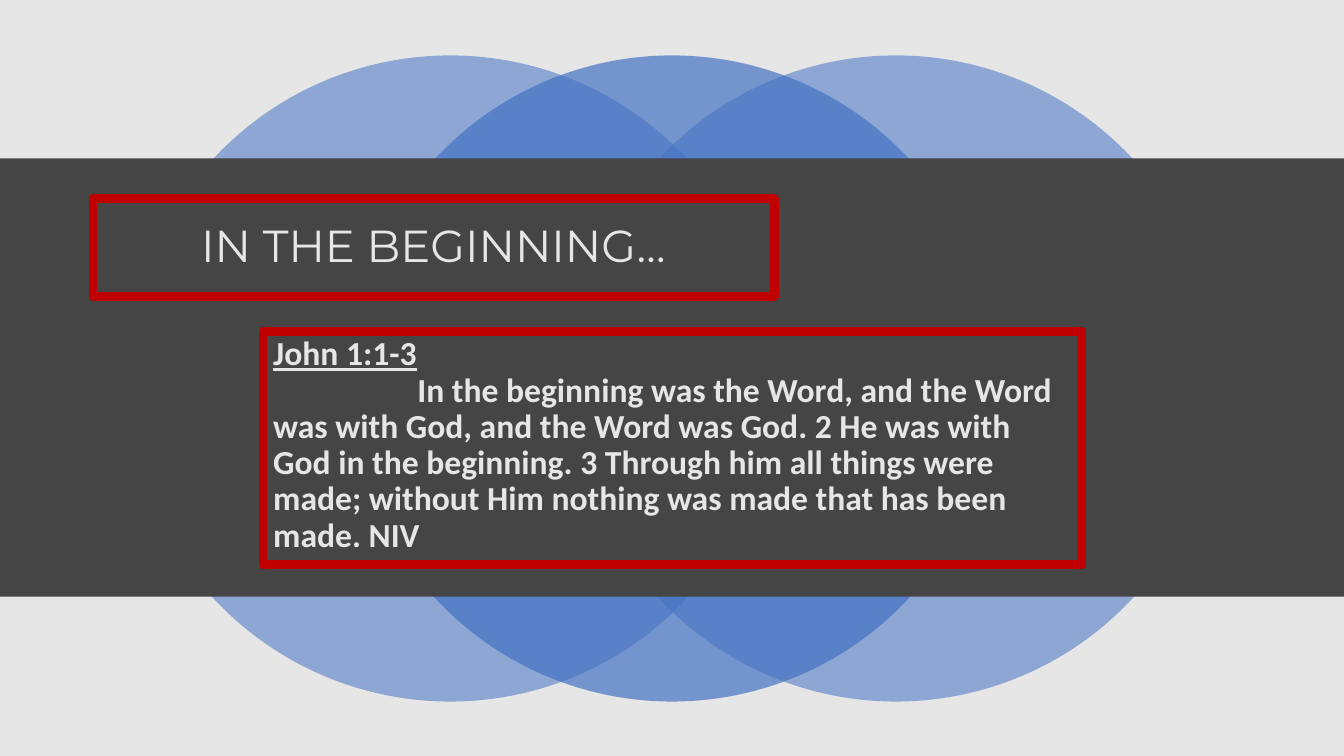
from dataclasses import dataclass

from lxml.etree import SubElement
from pptx import Presentation
from pptx.dml.color import RGBColor
from pptx.enum.shapes import MSO_SHAPE
from pptx.enum.text import MSO_ANCHOR, MSO_AUTO_SIZE, PP_ALIGN
from pptx.oxml.ns import qn
from pptx.util import Pt

PX = 9144


@dataclass(frozen=True)
class Theme:
    light: str = "E7E6E6"
    dark: str = "454545"
    blue: str = "4472C4"
    red: str = "C00000"
    head: str = "Montserrat"
    text: str = "Calibri"
    head_size: int = 32
    text_size: int = 24
    edge: int = 6


@dataclass(frozen=True)
class Box:
    left: int
    top: int
    width: int
    height: int


@dataclass(frozen=True)
class Disc:
    left: int
    alpha: int


@dataclass(frozen=True)
class Line:
    text: str
    indent: int = 0
    under: bool = False


THEME = Theme()
WIDE, HIGH = 1333, 750
DISC_TOP, DISC_SIZE = 55, 641
DISCS = [Disc(126, 55), Disc(568, 55), Disc(346, 70)]
PAGE = Box(0, 0, WIDE, HIGH)
BAND = Box(0, 157, WIDE, 435)
TITLE = Box(92, 197, 676, 97)
VERSE = Box(261, 329, 812, 231)
LINES = [
    Line("John 1:1-3", under=True),
    Line("In the beginning was the Word, and the Word was with God, and the Word "
         "was God. 2 He was with God in the beginning. 3 Through him all things "
         "were made; without Him nothing was made that has been made. NIV", indent=143),
]


def tint(code: str) -> RGBColor:
    return RGBColor.from_string(code)


def draw(shapes, kind: MSO_SHAPE, box: Box, code: str, alpha: int = 100) -> None:
    shape = shapes.add_shape(kind, box.left * PX, box.top * PX,
                             box.width * PX, box.height * PX)
    shape.shadow.inherit = False
    shape.line.fill.background()
    shape.fill.solid()
    shape.fill.fore_color.rgb = tint(code)
    if alpha < 100:
        color = shape.element.spPr.find(f"{qn('a:solidFill')}/{qn('a:srgbClr')}")
        SubElement(color, qn("a:alpha"), val=str(alpha * 1000))


def frame(slide, holder, box: Box, anchor: MSO_ANCHOR):
    holder.left, holder.top = box.left * PX, box.top * PX
    holder.width, holder.height = box.width * PX, box.height * PX
    holder.line.color.rgb = tint(THEME.red)
    holder.line.width = Pt(THEME.edge)
    SubElement(holder.element.spPr.find(qn("a:ln")), qn("a:round"))
    slide.shapes.element.append(holder.element)
    body = holder.text_frame
    body.word_wrap = True
    body.auto_size = MSO_AUTO_SIZE.NONE
    body.vertical_anchor = anchor
    return body


def write(para, line: Line, face: str, size: int, align: PP_ALIGN, bold: bool) -> None:
    props = para._p.get_or_add_pPr()
    props.set("marL", "0")
    props.set("indent", str(line.indent * PX))
    SubElement(props, qn("a:buNone"))
    para.alignment = align
    para.line_spacing = 0.9
    para.space_before = Pt(0)
    run = para.add_run()
    run.text = line.text
    run.font.name = face
    run.font.size = Pt(size)
    run.font.bold = bold
    run.font.underline = line.under
    run.font.color.rgb = tint(THEME.light)


def main() -> None:
    deck = Presentation()
    deck.slide_width, deck.slide_height = WIDE * PX, HIGH * PX
    slide = deck.slides.add_slide(deck.slide_layouts[1])
    slide.background.fill.solid()
    slide.background.fill.fore_color.rgb = tint(THEME.dark)

    draw(slide.shapes, MSO_SHAPE.RECTANGLE, PAGE, THEME.light)
    group = slide.shapes.add_group_shape()
    for disc in DISCS:
        box = Box(disc.left, DISC_TOP, DISC_SIZE, DISC_SIZE)
        draw(group.shapes, MSO_SHAPE.OVAL, box, THEME.blue, disc.alpha)
    draw(slide.shapes, MSO_SHAPE.RECTANGLE, BAND, THEME.dark)

    title = frame(slide, slide.shapes.title, TITLE, MSO_ANCHOR.MIDDLE)
    write(title.paragraphs[0], Line("IN THE BEGINNING…"), THEME.head,
          THEME.head_size, PP_ALIGN.CENTER, False)

    verse = frame(slide, slide.placeholders[1], VERSE, MSO_ANCHOR.TOP)
    for index, line in enumerate(LINES):
        para = verse.add_paragraph() if index else verse.paragraphs[0]
        write(para, line, THEME.text, THEME.text_size, PP_ALIGN.LEFT, True)

    deck.save("out.pptx")


if __name__ == "__main__":
    main()
